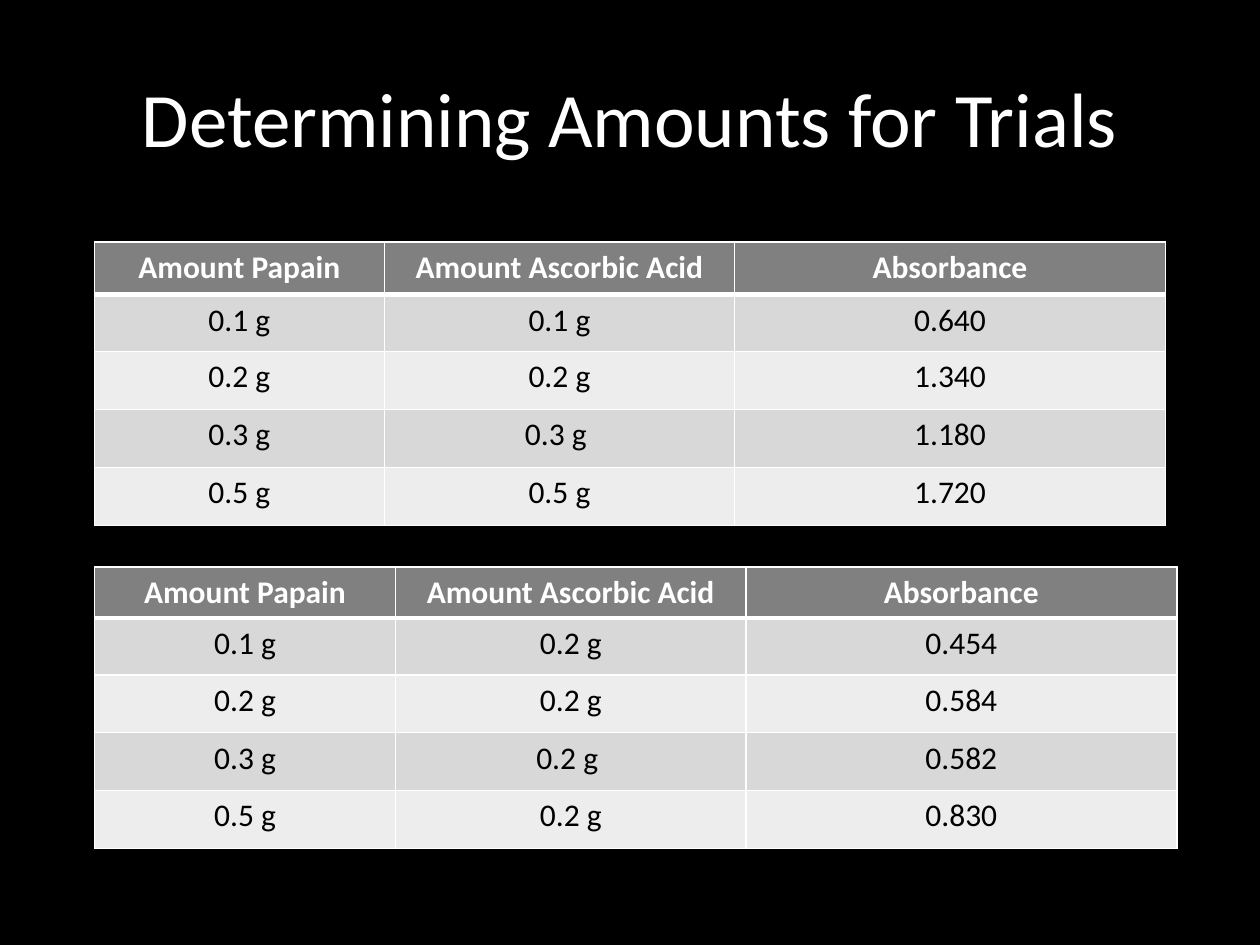
from dataclasses import dataclass

from lxml.etree import SubElement
from pptx import Presentation
from pptx.dml.color import RGBColor
from pptx.enum.text import MSO_ANCHOR, PP_ALIGN
from pptx.oxml.ns import qn
from pptx.slide import Slide
from pptx.table import _Cell
from pptx.text.text import TextFrame
from pptx.util import Inches, Pt

FONT = "Calibri"
COLORS = {
    "background": "000000",
    "light": "FFFFFF",
    "dark": "000000",
    "header": "808080",
    "odd": "D8D8D8",
    "even": "EDEDED",
}
HEADERS = ("Amount Papain", "Amount Ascorbic Acid", "Absorbance")
TABLE_LEFT = 0.75
ACID_WIDTH, ABSORBANCE_WIDTH = 2.78, 3.42
BODY_HEIGHTS = (0.45, 0.46, 0.46, 0.46)


@dataclass
class TrialTable:
    top: float
    papain_width: float
    header_height: float
    rows: tuple[tuple[str, str, str], ...]


TRIALS = (
    TrialTable(1.92, 2.3, 0.42, (
        ("0.1 g", "0.1 g", "0.640"),
        ("0.2 g", "0.2 g", "1.340"),
        ("0.3 g", "0.3 g ", "1.180"),
        ("0.5 g", "0.5 g", "1.720"),
    )),
    TrialTable(4.5, 2.39, 0.4, (
        ("0.1 g", "0.2 g", "0.454"),
        ("0.2 g", "0.2 g", "0.584"),
        ("0.3 g", "0.2 g ", "0.582"),
        ("0.5 g", "0.2 g", "0.830"),
    )),
)


def color(name: str) -> RGBColor:
    return RGBColor.from_string(COLORS[name])


def write(tf: TextFrame, text: str, size: int, ink: str, bold: bool = False) -> None:
    tf.text = text
    p = tf.paragraphs[0]
    p.alignment = PP_ALIGN.CENTER
    font = p.runs[0].font
    font.name, font.size, font.bold = FONT, Pt(size), bold
    font.color.rgb = color(ink)


def set_borders(cell: _Cell, top: int, bottom: int) -> None:
    """Draw all four cell edges; side edges are one point wide."""
    tc_pr = cell._tc.get_or_add_tcPr()
    for edge, width in (("L", 1), ("R", 1), ("T", top), ("B", bottom)):
        ln = SubElement(tc_pr, qn(f"a:ln{edge}"), w=str(Pt(width)))
        fill = SubElement(ln, qn("a:solidFill"))
        SubElement(fill, qn("a:srgbClr"), val=COLORS["light"])


def add_trial_table(slide: Slide, trial: TrialTable) -> None:
    widths = (trial.papain_width, ACID_WIDTH, ABSORBANCE_WIDTH)
    heights = (trial.header_height, *BODY_HEIGHTS)
    table = slide.shapes.add_table(
        len(heights), len(widths), Inches(TABLE_LEFT), Inches(trial.top),
        Inches(sum(widths)), Inches(sum(heights)),
    ).table
    for column, width in zip(table.columns, widths):
        column.width = Inches(width)
    for row, height in zip(table.rows, heights):
        row.height = Inches(height)

    for i, values in enumerate((HEADERS, *trial.rows)):
        is_header = i == 0
        band = "header" if is_header else "odd" if i % 2 else "even"
        for j, value in enumerate(values):
            cell = table.cell(i, j)
            write(cell.text_frame, value, 18, "light" if is_header else "dark", is_header)
            set_borders(cell, top=3 if i == 1 else 1, bottom=3 if is_header else 1)
            cell.fill.solid()
            cell.fill.fore_color.rgb = color(band)


def add_title(slide: Slide, text: str) -> None:
    title = slide.shapes.title
    title.left, title.top = Inches(0.5), Inches(0.3)
    title.width, title.height = Inches(9), Inches(1.25)
    title.text_frame.vertical_anchor = MSO_ANCHOR.MIDDLE
    write(title.text_frame, text, 44, "light")


def main() -> None:
    prs = Presentation()
    prs.slide_width, prs.slide_height = Inches(10), Inches(7.5)
    slide = prs.slides.add_slide(prs.slide_layouts.get_by_name("Title Only"))
    slide.background.fill.solid()
    slide.background.fill.fore_color.rgb = color("background")
    add_title(slide, "Determining Amounts for Trials")
    for trial in TRIALS:
        add_trial_table(slide, trial)
    prs.save("out.pptx")


if __name__ == "__main__":
    main()
